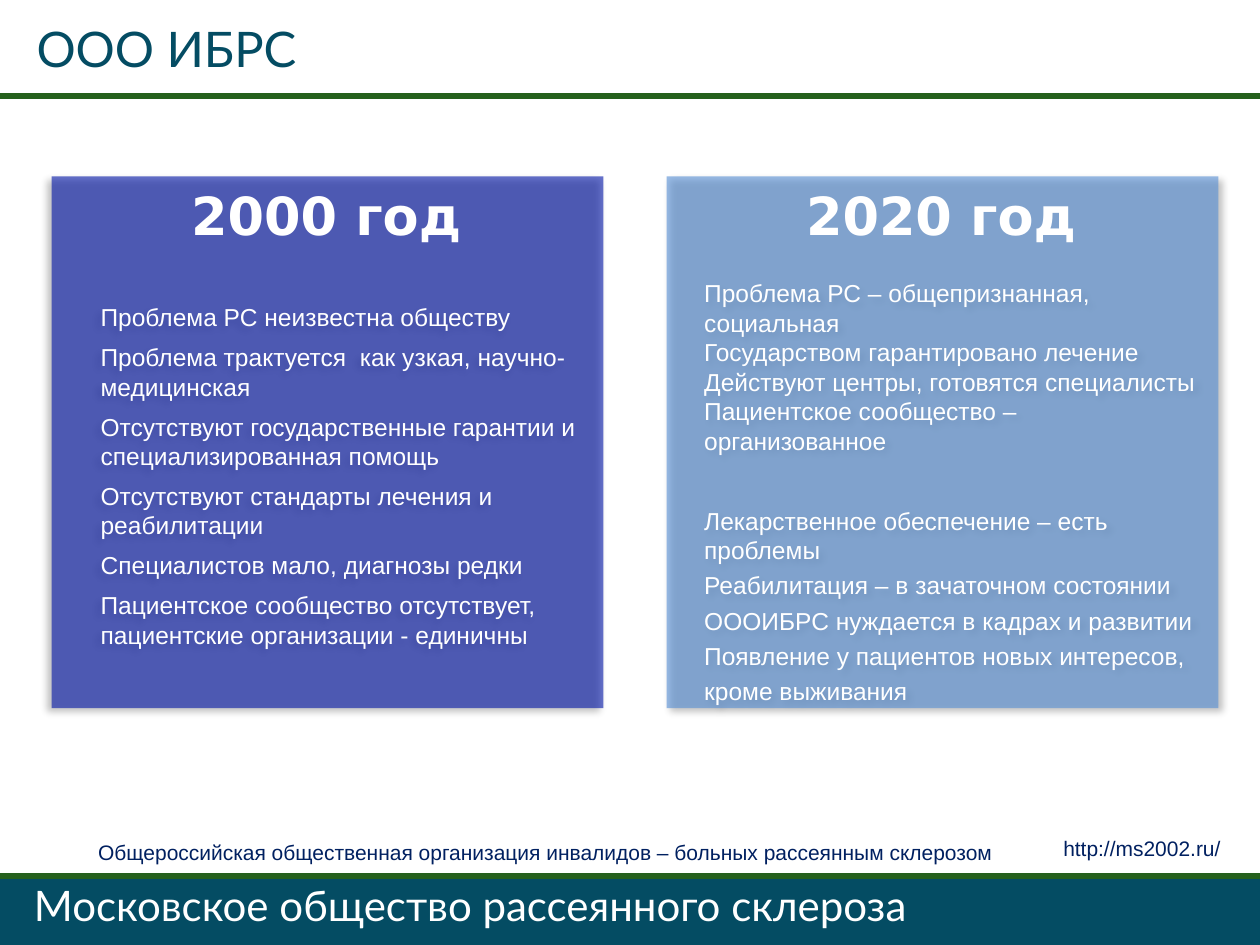
from pptx import Presentation
from pptx.dml.color import RGBColor
from pptx.enum.shapes import MSO_CONNECTOR, MSO_SHAPE
from pptx.enum.text import MSO_ANCHOR, PP_ALIGN
from pptx.oxml.ns import qn
from pptx.util import Inches, Pt
from lxml.etree import SubElement

TEAL, GREEN, NAVY, WHITE = "044C63", "25601D", "002060", "FFFFFF"


def color(value):
    return RGBColor.from_string(value)


class SlideBuilder:
    heading = {"name": "Lato", "size": Pt(28)}
    footer = {"name": "Lato", "size": Pt(24)}
    year = {"name": "DejaVu Sans", "size": Pt(30), "bold": True}
    body = {"name": "Arial", "size": Pt(14)}
    small = {"name": "Arial", "size": Pt(12)}

    def __init__(self, slide):
        self.slide = slide

    def set_text(self, para, text, style, hue):
        para.text = text  # a newline becomes a line break
        for span in para.runs:
            for name, value in style.items():
                setattr(span.font, name, value)
            span.font.color.rgb = color(hue)
        for line_break in para._p.findall(qn("a:br")):
            SubElement(line_break, qn("a:rPr"), sz=str(int(style["size"].pt * 100)))

    def label(self, place, text, style, hue, side=0.1, wrap=True, align=PP_ALIGN.LEFT):
        box = self.slide.shapes.add_textbox(*map(Inches, place))
        frame = box.text_frame
        frame.word_wrap = wrap
        frame.margin_left = frame.margin_right = Inches(side)
        para = frame.paragraphs[0]
        para.alignment = align
        self.set_text(para, text, style, hue)

    def rule(self, top):
        line = self.slide.shapes.add_connector(
            MSO_CONNECTOR.STRAIGHT, 0, Inches(top), Inches(10), Inches(top))
        line.line.color.rgb = color(GREEN)
        line.line.width = Pt(3.5)
        SubElement(line._element.spPr, qn("a:effectLst"))

    def block(self, place, fill):
        shape = self.slide.shapes.add_shape(MSO_SHAPE.RECTANGLE, *map(Inches, place))
        shape.shadow.inherit = False
        shape.fill.solid()
        shape.fill.fore_color.rgb = color(fill)
        shape.line.fill.background()
        return shape

    def add_shadow(self, shape, degrees):
        properties = shape._element.spPr
        fill = properties.find(qn("a:solidFill")).find(qn("a:srgbClr"))
        SubElement(fill, qn("a:alpha"), val="60000")
        shadow = SubElement(
            properties.find(qn("a:effectLst")), qn("a:outerShdw"), blurRad=str(Pt(4)),
            dist=str(Pt(3)), dir=str(degrees * 60000), rotWithShape="0")
        tint = SubElement(shadow, qn("a:srgbClr"), val="000000")
        SubElement(tint, qn("a:alpha"), val="40000")

    def panel(self, left, fill, degrees, year, indent, first_line, paragraphs):
        shape = self.block((left, 1.4, 4.38, 4.22), fill)
        self.add_shadow(shape, degrees)
        frame = shape.text_frame
        frame.word_wrap = True
        frame.vertical_anchor = MSO_ANCHOR.TOP
        frame.margin_top = Inches(first_line)
        for index, (text, after, spacing) in enumerate(paragraphs):
            para = frame.add_paragraph() if index else frame.paragraphs[0]
            para._p.get_or_add_pPr().set("marL", str(Inches(indent)))
            layout = {"alignment": PP_ALIGN.LEFT, "space_after": Pt(after),
                      "line_spacing": spacing}
            for name, value in layout.items():
                setattr(para, name, value)
            self.set_text(para, text, self.body, WHITE)
        self.label((left + 0.07, 1.4, 4.22, 0.61), year, self.year, WHITE,
                   align=PP_ALIGN.CENTER)


def main():
    deck = Presentation()
    deck.slide_width, deck.slide_height = Inches(10), Inches(7.5)
    page = SlideBuilder(deck.slides.add_slide(deck.slide_layouts[6]))

    # Heading
    page.label((0.22, 0.1, 9.59, 0.57), "ООО ИБРС", page.heading, TEAL, side=0.07)
    page.rule(0.76)

    # Comparison of the two years
    past = [
        "Проблема РС неизвестна обществу",
        "Проблема трактуется  как узкая, научно-медицинская",
        "Отсутствуют государственные гарантии и специализированная помощь",
        "Отсутствуют стандарты лечения и реабилитации",
        "Специалистов мало, диагнозы редки",
        "Пациентское сообщество отсутствует,  пациентские организации - единичны",
    ]
    present = [
        ("Проблема РС – общепризнанная, социальная \n"
         "Государством гарантировано лечение\n"
         "Действуют центры, готовятся специалисты\n"
         "Пациентское сообщество – организованное", 29, 1),
        ("Лекарственное обеспечение – есть проблемы", 0, 1),
        ("Реабилитация – в зачаточном состоянии\n"
         "ОООИБРС нуждается в кадрах и развитии", 0, 1.2),
        ("Появление у пациентов новых интересов, кроме выживания", 0, 1.2),
    ]
    page.panel(0.41, "0014A8", 135, "2000 год", 0.29, 1,
               [(text, 6, 1) for text in past])
    page.panel(5.29, "558ED5", 45, "2020 год", 0.2, 0.81, present)

    # Footer
    page.block((0, 6.97, 10, 0.53), TEAL)
    page.rule(6.95)
    page.label((0.2, 6.93, 7.27, 0.51), "Московское\u00a0общество рассеянного склероза",
               page.footer, WHITE, side=0.07, wrap=False)
    page.label((0.68, 6.61, 7.72, 0.22),
               "Общероссийская общественная организация инвалидов – больных рассеянным склерозом",
               page.small, NAVY)
    page.label((8.34, 6.58, 1.49, 0.3), "http://ms2002.ru/", page.small, NAVY)

    deck.save("out.pptx")


if __name__ == "__main__":
    main()
